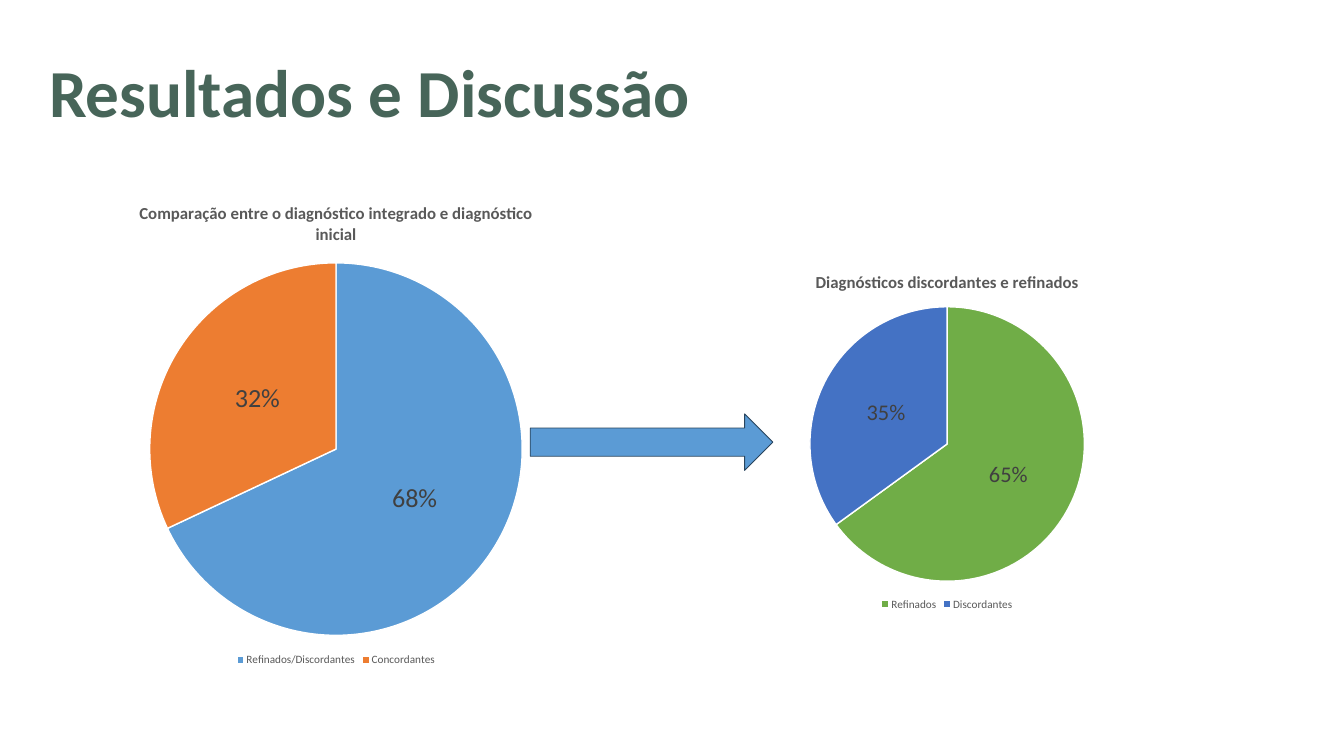
from pptx import Presentation
from pptx.chart.data import CategoryChartData
from pptx.dml.color import RGBColor
from pptx.enum.chart import XL_CHART_TYPE, XL_LABEL_POSITION, XL_LEGEND_POSITION
from pptx.enum.shapes import MSO_SHAPE
from pptx.enum.text import MSO_ANCHOR, MSO_AUTO_SIZE, PP_ALIGN
from pptx.oxml import parse_xml
from pptx.oxml.ns import nsdecls
from pptx.util import Inches, Pt

PIE = XL_CHART_TYPE.PIE
CENTER = XL_LABEL_POSITION.CENTER
BOTTOM = XL_LEGEND_POSITION.BOTTOM
RIGHT_ARROW = MSO_SHAPE.RIGHT_ARROW
TOP = MSO_ANCHOR.TOP
NO_FIT = MSO_AUTO_SIZE.NONE
LEFT, MIDDLE = PP_ALIGN.LEFT, PP_ALIGN.CENTER

GREEN_TITLE = RGBColor(0x47, 0x65, 0x59)
GREY = RGBColor(0x59, 0x59, 0x59)
DARK_GREY = RGBColor(0x40, 0x40, 0x40)
WHITE = RGBColor(0xFF, 0xFF, 0xFF)
BLUE = RGBColor(0x5B, 0x9B, 0xD5)
NAVY = RGBColor(0x28, 0x44, 0x5D)
ORANGE = RGBColor(0xED, 0x7D, 0x31)
GREEN = RGBColor(0x70, 0xAD, 0x47)
ROYAL = RGBColor(0x44, 0x72, 0xC4)
FONT = "Calibri"

prs = Presentation()
prs.slide_width, prs.slide_height = Inches(20), Inches(11.25)
COL, ROW = prs.slide_width / 20, prs.slide_height / 11.25


def box(x, y, w, h):
    return int(x * COL), int(y * ROW), int(w * COL), int(h * ROW)


def write(tf, text, size, color, align=LEFT, bold=True, spacing=None):
    p = tf.paragraphs[0]
    p.alignment = align
    if spacing:
        p.line_spacing = Pt(spacing)
    r = p.add_run()
    r.text = text
    r.font.name, r.font.size, r.font.bold = FONT, Pt(size), bold
    r.font.color.rgb = color


s = prs.slides.add_slide(prs.slide_layouts[5])

title = s.shapes.title
title.left, title.top, title.width, title.height = box(0.63, 0.57, 12.76, 1.33)
tf = title.text_frame
tf.word_wrap, tf.auto_size, tf.vertical_anchor = True, NO_FIT, TOP
tf.margin_left = tf.margin_top = Inches(0.1)
write(tf, "Resultados e Discussão", size=72, color=GREEN_TITLE, spacing=92)

pies = [
    ("Comparação entre o diagnóstico integrado e diagnóstico inicial",
     (1, 2.76, 8, 7.2), (0.15, 0.16, 0.7, 0.77), 28,
     [("Refinados/Discordantes", 0.68, BLUE), ("Concordantes", 0.32, ORANGE)]),
    ("Diagnósticos discordantes e refinados",
     (9.84, 3.82, 8.51, 5.31), (0.26, 0.14, 0.48, 0.77), 24,
     [("Refinados", 0.65, GREEN), ("Discordantes", 0.35, ROYAL)]),
]
for heading, place, (x, y, w, h), label_size, slices in pies:
    data = CategoryChartData(number_format="0%")
    data.categories = [name for name, value, color in slices]
    data.add_series("Series 1", [value for name, value, color in slices])
    chart = s.shapes.add_chart(PIE, *box(*place), data).chart
    chart.font.name, chart.font.size = FONT, Pt(10)

    chart.has_title = True
    write(chart.chart_title.text_frame, heading, size=18, color=GREY, align=MIDDLE)
    chart.chart_title.include_in_layout = False

    chart.has_legend = True
    legend = chart.legend
    legend.position, legend.include_in_layout = BOTTOM, False
    legend.font.name, legend.font.size = FONT, Pt(12)
    legend.font.color.rgb = GREY

    plot = chart.plots[0]
    plot.vary_by_categories = True
    for i, (name, value, color) in enumerate(slices):
        fmt = plot.series[0].points[i].format
        fmt.fill.solid()
        fmt.fill.fore_color.rgb = color
        fmt.line.color.rgb = WHITE
        fmt.line.width = Pt(1.5)

    plot.has_data_labels = True
    labels = plot.data_labels
    labels.show_value, labels.position = True, CENTER
    labels.number_format, labels.number_format_is_linked = "0%", False
    labels.font.name, labels.font.size = FONT, Pt(label_size)
    labels.font.color.rgb = DARK_GREY

    area = chart._chartSpace.chart.plotArea
    for old in area.xpath("c:layout"):
        area.remove(old)
    area.insert(0, parse_xml(
        f'<c:layout {nsdecls("c")}><c:manualLayout><c:layoutTarget val="inner"/>'
        '<c:xMode val="edge"/><c:yMode val="edge"/>'
        f'<c:x val="{x}"/><c:y val="{y}"/><c:w val="{w}"/><c:h val="{h}"/>'
        '</c:manualLayout></c:layout>'))

arrow = s.shapes.add_shape(RIGHT_ARROW, *box(7.89, 6.16, 3.61, 0.84))
arrow.shadow.inherit = False
arrow.fill.solid()
arrow.fill.fore_color.rgb = BLUE
arrow.line.color.rgb = NAVY
arrow.line.width = Pt(1)

prs.save("out.pptx")
